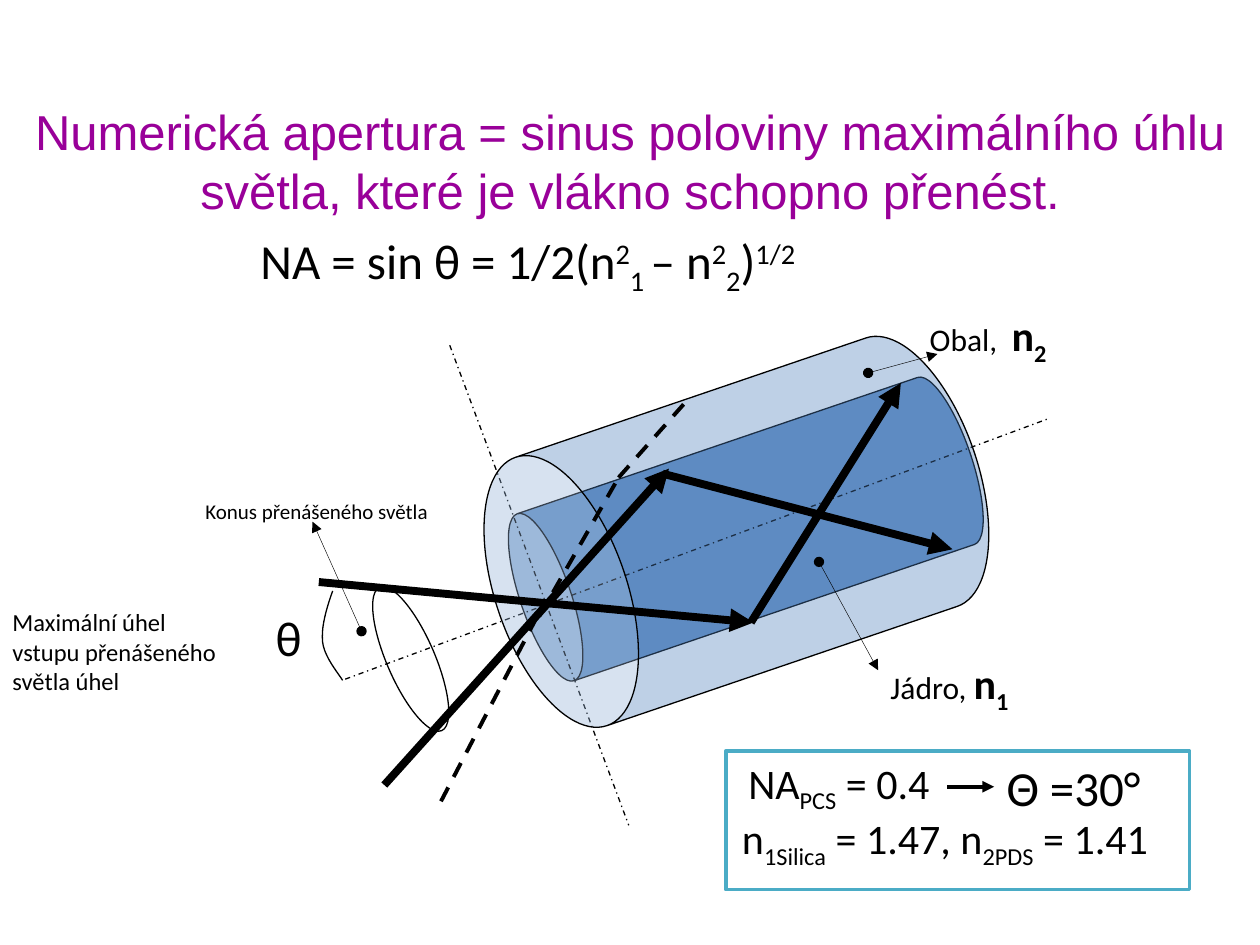
from lxml.etree import SubElement
from pptx import Presentation
from pptx.dml.color import RGBColor
from pptx.enum.dml import MSO_LINE
from pptx.enum.shapes import MSO_CONNECTOR, MSO_SHAPE
from pptx.enum.text import MSO_ANCHOR, MSO_AUTO_SIZE, PP_ALIGN
from pptx.oxml.ns import qn
from pptx.util import Pt

BLACK = RGBColor(0x00, 0x00, 0x00)
PURPLE = RGBColor(0x99, 0x00, 0x99)
BLUE = RGBColor(0x4F, 0x81, 0xBD)
TEAL = RGBColor(0x4B, 0xAC, 0xC6)
SUPER, SUB = 30, -25


def bezier_points(start, control_1, control_2, end, steps=10):
    for step in range(1, steps + 1):
        t = step / steps
        weights = ((1 - t) ** 3, 3 * t * (1 - t) ** 2, 3 * t**2 * (1 - t), t**3)
        corners = (start, control_1, control_2, end)
        yield tuple(sum(w * c[axis] for w, c in zip(weights, corners)) for axis in (0, 1))


class FibreSlide:
    font_name = "Calibri"

    def __init__(self, presentation):
        self.slide = presentation.slides.add_slide(presentation.slide_layouts[5])
        self.shapes = self.slide.shapes

    def open_group(self):
        self.shapes = self.slide.shapes.add_group_shape().shapes

    def close_group(self):
        self.shapes = self.slide.shapes

    def title(self, text, left, top, width, height):
        heading = self.slide.shapes.title
        heading.left, heading.top = Pt(left), Pt(top)
        heading.width, heading.height = Pt(width), Pt(height)
        frame = heading.text_frame
        frame.text = text
        frame.word_wrap = True
        frame.vertical_anchor = MSO_ANCHOR.MIDDLE
        paragraph = frame.paragraphs[0]
        paragraph.alignment = PP_ALIGN.CENTER
        paragraph.font.name = "Arial"
        paragraph.font.size = Pt(28)
        paragraph.font.color.rgb = PURPLE

    def label(self, parts, left, top, width, height, size):
        box = self.shapes.add_textbox(Pt(left), Pt(top), Pt(width), Pt(height))
        frame = box.text_frame
        frame.word_wrap = True
        frame.auto_size = MSO_AUTO_SIZE.SHAPE_TO_FIT_TEXT
        paragraph = frame.paragraphs[0]
        paragraph.font.name = self.font_name
        paragraph.font.size = Pt(size)
        paragraph.font.color.rgb = BLACK
        for text, baseline, *bold_size in parts:
            run = paragraph.add_run()
            run.text = text
            if baseline:
                run._r.get_or_add_rPr().set("baseline", str(baseline * 1000))
            if bold_size:
                run.font.bold = True
                run.font.size = Pt(bold_size[0])
        return box

    def shape(self, kind, left, top, width, height, line=BLACK, weight=0.75,
              rotation=0, cap=None, opacity=None):
        solid = self.shapes.add_shape(kind, Pt(left), Pt(top), Pt(width), Pt(height))
        solid.shadow.inherit = False
        solid.rotation = rotation
        solid.line.color.rgb = line
        solid.line.width = Pt(weight)
        if cap is not None:
            solid.adjustments[0] = cap
        if opacity is None:
            solid.fill.background()
        else:
            solid.fill.solid()
            solid.fill.fore_color.rgb = BLUE
            colour = solid._element.spPr.find(qn("a:solidFill"))[0]
            SubElement(colour, qn("a:alpha")).set("val", str(opacity * 1000))

    def line(self, start, end, weight, dash=None, head=None, tail=None):
        connector = self.shapes.add_connector(
            MSO_CONNECTOR.STRAIGHT, *(Pt(value) for value in (*start, *end)))
        connector.line.color.rgb = BLACK
        connector.line.width = Pt(weight)
        if dash:
            connector.line.dash_style = dash
        properties = connector._element.spPr
        outline = properties.find(qn("a:ln"))
        for tag, kind in (("a:headEnd", head), ("a:tailEnd", tail)):
            if kind:
                SubElement(outline, qn(tag)).set("type", kind)
        SubElement(properties, qn("a:effectLst"))
        return connector

    def leader(self, start, end):
        self.line(start, end, 0.25, head="oval", tail="triangle")

    def arc(self, start, *curves):
        builder = self.shapes.build_freeform(Pt(start[0]), Pt(start[1]))
        for curve in curves:
            points = list(bezier_points(start, *curve))
            builder.add_line_segments([(Pt(x), Pt(y)) for x, y in points], close=False)
            start = curve[-1]
        angle = builder.convert_to_shape()
        angle.shadow.inherit = False
        angle.fill.background()
        angle.line.color.rgb = BLACK
        angle.line.width = Pt(0.75)


def main():
    presentation = Presentation()
    presentation.slide_width, presentation.slide_height = Pt(720), Pt(540)
    fibre = FibreSlide(presentation)

    fibre.title("Numerická apertura = sinus poloviny maximálního úhlu světla, "
                "které je vlákno schopno přenést.", 0, 21.6, 720, 140.4)
    fibre.label([("NA = sin θ = 1/2(n", 0), ("2", SUPER), ("1 ", SUB), ("– n", 0),
                 ("2", SUPER), ("2", SUB), (")", 0), ("1/2", SUPER)],
                141.8, 128.2, 436.3, 41, 28)
    fibre.label([("θ", 0)], 150.5, 343.4, 45.4, 41, 28)

    fibre.open_group()
    fibre.shape(MSO_SHAPE.CAN, 375.8, 167, 100.8, 270.7, rotation=251.2, cap=0.288, opacity=86)
    for axis in (((197.3, 388.1), (599.8, 239)), ((257, 197.3), (359.3, 471.6))):
        fibre.line(*axis, 0.75, dash=MSO_LINE.DASH_DOT)
    fibre.shape(MSO_SHAPE.CAN, 339.8, 160.6, 162, 286.6, rotation=251.2, cap=0.464, opacity=37)
    for ray in (((182.2, 332.6), (430.6, 355.7)), ((219.6, 448.6), (382.3, 267.8)),
                ((429.1, 355.7), (514.8, 218.9)), ((378.7, 270.7), (544.3, 313.9))):
        fibre.line(*ray, 4.5, tail="triangle")
    fibre.shape(MSO_SHAPE.OVAL, 221, 331.9, 27.4, 89.3, rotation=336.6)
    fibre.close_group()

    fibre.label([("Jádro, ", 0), ("n", 0, 24), ("1", SUB, 24), (" ", 0)],
                501.8, 372.2, 124.6, 36, 18)
    fibre.label([("Obal,  ", 0), ("n", 0, 24), ("2", SUB, 24)], 524.2, 173.5, 124.6, 36, 18)
    fibre.leader((468, 321.1), (501.8, 383))
    fibre.leader((496.1, 213.1), (535.7, 202.3))
    fibre.arc((190.1, 337.7),
              ((186.5, 347.8), (183.6, 357.8), (184.3, 366.5)),
              ((185, 375.1), (193.7, 385.2), (195.8, 388.8)))
    fibre.label([("Maximální úhel vstupu přenášeného světla úhel", 0)], 0, 343.4, 142, 57.6, 14)
    fibre.label([("Konus přenášeného světla", 0)], 110.2, 281.5, 142, 36, 12)
    fibre.leader((206.6, 360.7), (178.6, 298.1))

    fibre.open_group()
    for escaping_ray in (((252, 457.9), (308.2, 349.9)), ((308.2, 352.1), (353.5, 272.9)),
                         ((353.5, 272.9), (393.8, 227.5))):
        fibre.line(*escaping_ray, 2.25, dash=MSO_LINE.DASH)
    fibre.close_group()

    fibre.label([("NA", 0), ("PCS", SUB), (" = 0.4", 0)], 420.5, 429.1, 215.3, 36, 24)
    fibre.label([("n", 0), ("1Silica", SUB), (" = 1.47, n", 0), ("2PDS", SUB), (" = 1.41", 0)],
                416.9, 460.8, 262.8, 36, 24)
    acceptance_angle = fibre.label([("Θ =30°", 0)], 568.1, 429.1, 139.7, 41, 28)
    implication = fibre.line((541.4, 449.6), (568.1, 449.6), 2.25, tail="triangle")
    implication.end_connect(acceptance_angle, 1)
    fibre.shape(MSO_SHAPE.RECTANGLE, 414.7, 429.1, 265, 79.2, line=TEAL, weight=2)

    presentation.save("out.pptx")


if __name__ == "__main__":
    main()
